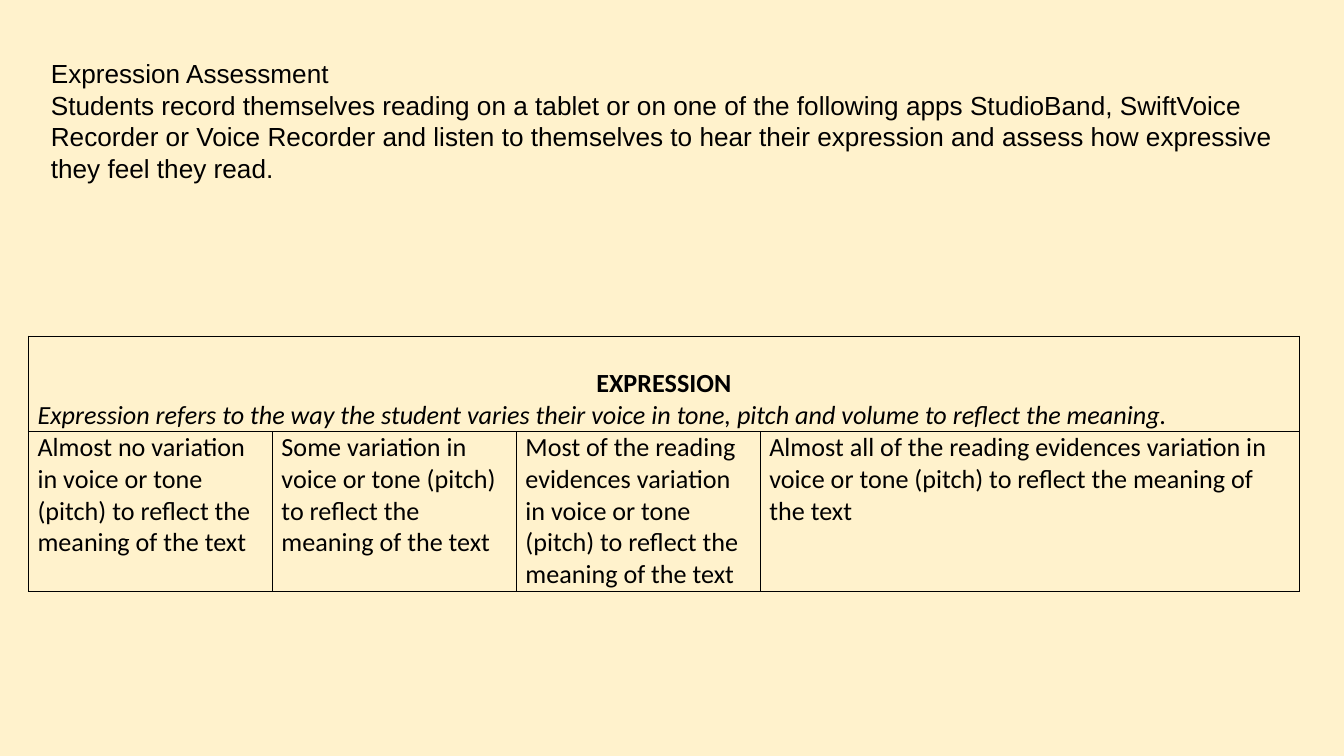
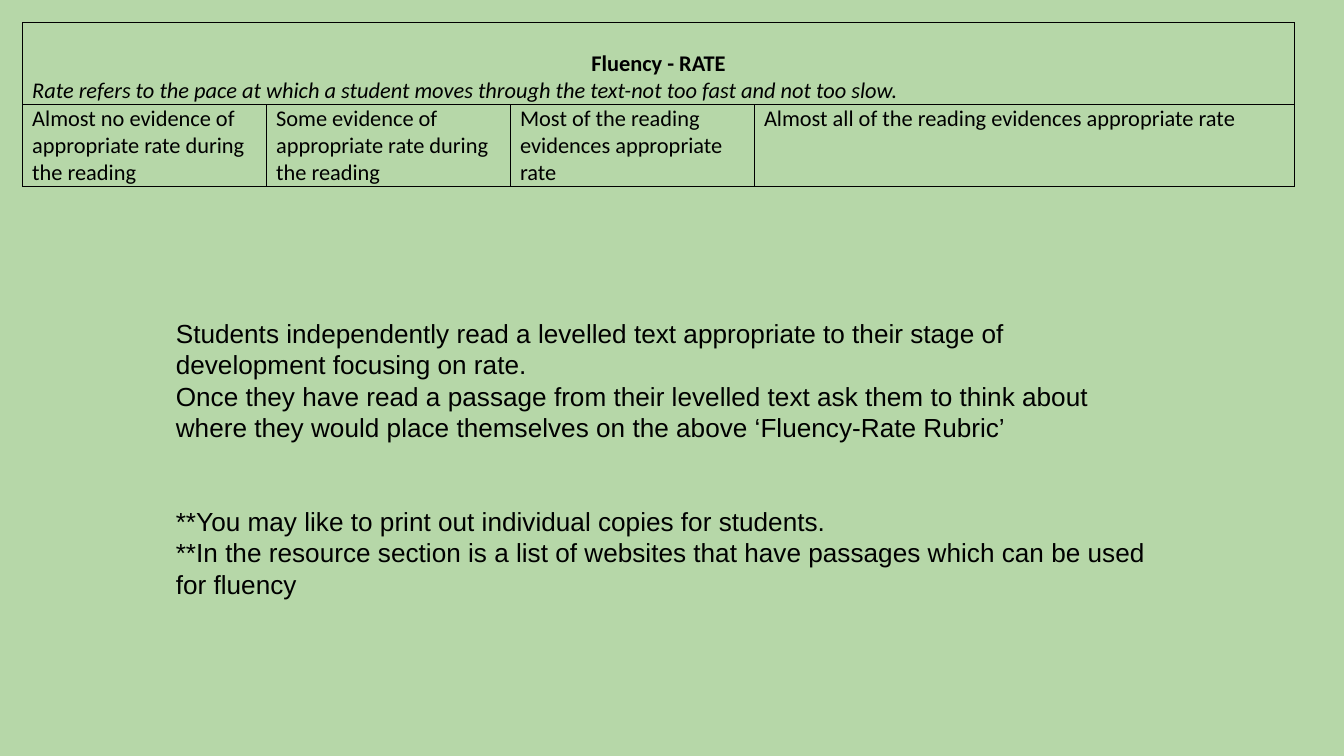
"""Build two reading-fluency slides, each with a rubric table and instructions."""
from dataclasses import dataclass

from lxml.etree import SubElement
from pptx import Presentation
from pptx.dml.color import RGBColor
from pptx.enum.text import MSO_ANCHOR, PP_ALIGN
from pptx.oxml.ns import qn
from pptx.util import Inches, Pt

BLACK = RGBColor(0x00, 0x00, 0x00)
CREAM = RGBColor(0xFF, 0xF2, 0xCC)
GREEN = RGBColor(0xB6, 0xD7, 0xA8)
BODY_FONT = "Arial"
TABLE_FONT = "Calibri"
BODY_SIZE = 14
TABLE_LINE = 1.22
HEADER_LINES = 3
TABLE_WIDTH = 9.46
LEVEL_WIDTH = 1.815
BLANK_LAYOUT = 6


@dataclass
class Rubric:
    """A scale of levels for one reading skill."""
    left: float
    top: float
    size: int
    heading: str
    meaning: str
    levels: tuple[str, ...]
    level_lines: int


@dataclass
class Instructions:
    """A box of paragraphs, each with the points of space above it."""
    left: float
    top: float
    width: float
    height: float
    paragraphs: tuple[tuple[str, float], ...]


@dataclass
class Page:
    """One slide of the deck."""
    background: RGBColor
    rubric: Rubric
    instructions: Instructions


PAGES = (
    Page(
        CREAM,
        Rubric(
            0.21, 2.5, 14, "EXPRESSION",
            "Expression refers to the way the student varies their voice in tone, "
            "pitch and volume to reflect the meaning.",
            (
                "Almost no variation in voice or tone (pitch) to reflect the meaning of the text",
                "Some variation in voice or tone (pitch) to reflect the meaning of the text",
                "Most of the reading evidences variation in voice or tone (pitch) "
                "to reflect the meaning of the text",
                "Almost all of the reading evidences variation in voice or tone (pitch) "
                "to reflect the meaning of the text",
            ),
            5,
        ),
        Instructions(
            0.28, 0.33, 9.32, 1.35,
            (
                ("Expression Assessment", 0),
                ("Students record themselves reading on a tablet or on one of the following "
                 "apps StudioBand, SwiftVoice Recorder or Voice Recorder and listen to "
                 "themselves to hear their expression and assess how expressive they feel "
                 "they read.", 0),
            ),
        ),
    ),
    Page(
        GREEN,
        Rubric(
            0.17, 0.17, 12, "Fluency - RATE",
            "Rate refers to the pace at which a student moves through the text-not too "
            "fast and not too slow.",
            (
                "Almost no evidence of appropriate rate during the reading",
                "Some evidence of appropriate rate during the reading",
                "Most of the reading evidences appropriate rate",
                "Almost all of the reading evidences appropriate rate",
            ),
            3,
        ),
        Instructions(
            1.21, 2.26, 7.52, 2.32,
            (
                ("Students independently read a levelled text appropriate to their stage "
                 "of development focusing on rate.", 0),
                ("Once they have read a passage from their levelled text ask them to think "
                 "about where they would place themselves on the above "
                 "‘Fluency-Rate Rubric’", 0),
                ("**You may like to print out individual copies for students.", 33.5),
                ("**In the resource section is a list of websites that have passages which "
                 "can be used for fluency", 0),
            ),
        ),
    ),
)


def write(frame, text: str, *, font: str, size: int, first: bool = True,
          bold: bool = False, italic: bool = False, align=PP_ALIGN.LEFT,
          before: float = 0) -> None:
    """Write one formatted paragraph into a text frame."""
    para = frame.paragraphs[0] if first else frame.add_paragraph()
    para.alignment = align
    para.space_before = Pt(before)
    span = para.add_run()
    span.text = text
    span.font.name = font
    span.font.size = Pt(size)
    span.font.bold = bold
    span.font.italic = italic
    span.font.color.rgb = BLACK


def format_cell(cell) -> None:
    """Give a cell thin black borders, no fill and narrow margins."""
    properties = cell._tc.get_or_add_tcPr()
    for side in ("lnL", "lnR", "lnT", "lnB"):
        line = SubElement(properties, qn(f"a:{side}"), w=str(Pt(0.5)))
        fill = SubElement(line, qn("a:solidFill"))
        SubElement(fill, qn("a:srgbClr"), val=str(BLACK))
    cell.fill.background()
    cell.margin_left = cell.margin_right = Inches(0.07)
    cell.margin_top = cell.margin_bottom = 0
    cell.vertical_anchor = MSO_ANCHOR.TOP


def draw_rubric(slide, rubric: Rubric) -> None:
    """Draw a rubric with a merged header above its levels."""
    line_height = Pt(rubric.size * TABLE_LINE)
    row_lines = (HEADER_LINES, rubric.level_lines)
    last = len(rubric.levels) - 1
    table = slide.shapes.add_table(
        len(row_lines), len(rubric.levels), Inches(rubric.left), Inches(rubric.top),
        Inches(TABLE_WIDTH), line_height * sum(row_lines)).table
    table.first_row = table.horz_banding = False
    for column in table.columns:
        column.width = Inches(LEVEL_WIDTH)
    table.columns[last].width = Inches(TABLE_WIDTH - last * LEVEL_WIDTH)
    for row, lines in zip(table.rows, row_lines):
        row.height = line_height * lines
        for cell in row.cells:
            format_cell(cell)

    header = table.cell(0, 0)
    header.merge(table.cell(0, last))
    header.margin_top = line_height
    write(header.text_frame, rubric.heading, font=TABLE_FONT, size=rubric.size,
          bold=True, align=PP_ALIGN.CENTER)
    write(header.text_frame, rubric.meaning, font=TABLE_FONT, size=rubric.size,
          first=False, italic=True)
    for cell, level in zip(table.rows[1].cells, rubric.levels):
        write(cell.text_frame, level, font=TABLE_FONT, size=rubric.size)


def draw_instructions(slide, instructions: Instructions) -> None:
    """Draw the box of instructions."""
    box = slide.shapes.add_textbox(
        Inches(instructions.left), Inches(instructions.top),
        Inches(instructions.width), Inches(instructions.height))
    frame = box.text_frame
    frame.word_wrap = True
    frame.margin_left = frame.margin_right = Inches(0.1)
    frame.margin_top = frame.margin_bottom = Inches(0.1)
    for index, (text, before) in enumerate(instructions.paragraphs):
        write(frame, text, font=BODY_FONT, size=BODY_SIZE, first=index == 0,
              before=before)


def main() -> None:
    """Build and save the deck."""
    deck = Presentation()
    deck.slide_width = Inches(10)
    deck.slide_height = Inches(5.625)
    for page in PAGES:
        slide = deck.slides.add_slide(deck.slide_layouts[BLANK_LAYOUT])
        slide.background.fill.solid()
        slide.background.fill.fore_color.rgb = page.background
        draw_rubric(slide, page.rubric)
        draw_instructions(slide, page.instructions)
    deck.save("out.pptx")


if __name__ == "__main__":
    main()
